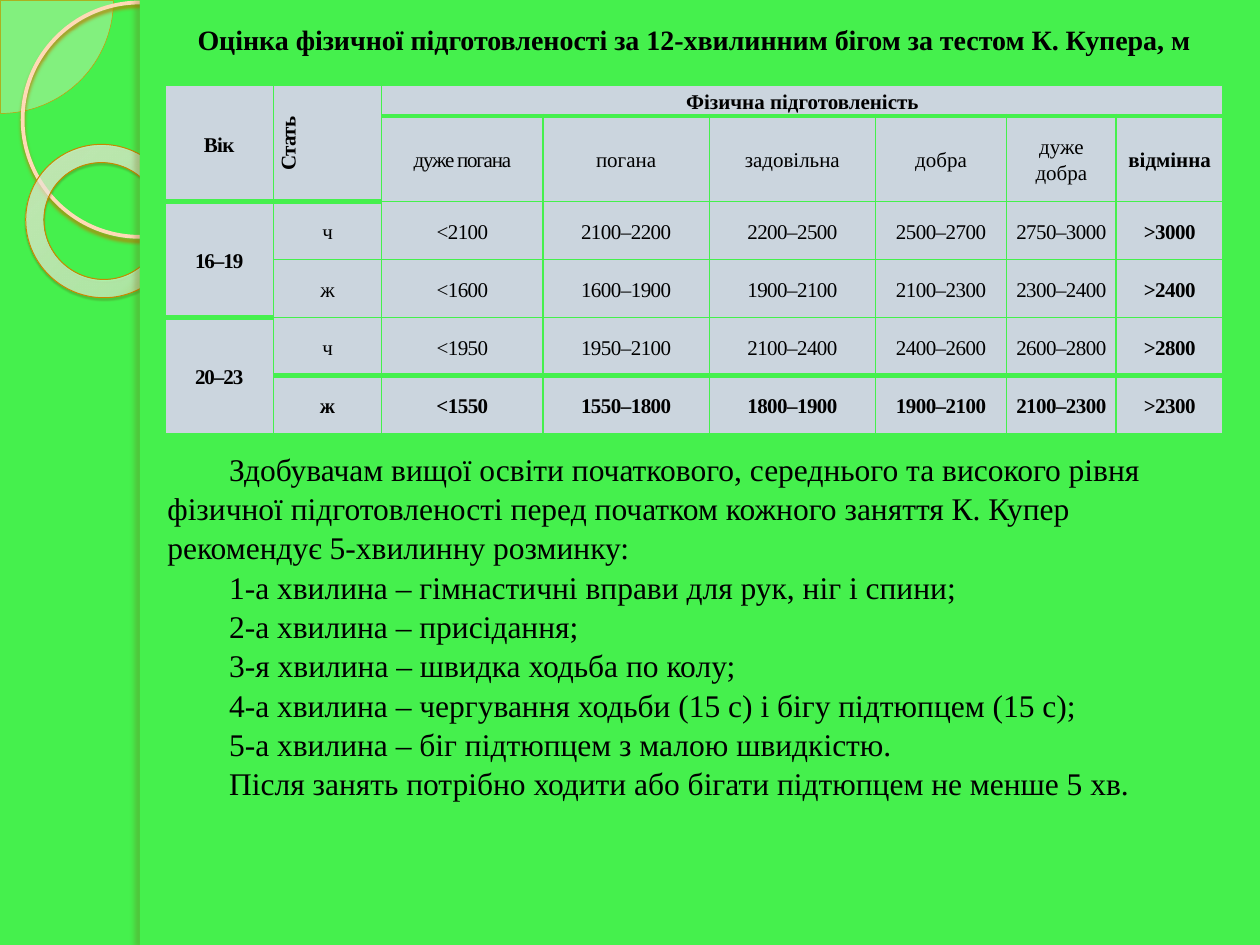
from lxml import etree
from pptx import Presentation
from pptx import util as u
from pptx.dml.color import RGBColor
from pptx.enum import shapes, text
from pptx.oxml import parse_xml
from pptx.oxml.ns import qn

GREEN = RGBColor(0x45, 0xF0, 0x4D)
CELL = RGBColor(0xCB, 0xD5, 0xDE)
BLACK = RGBColor(0x00, 0x00, 0x00)
CREAM = RGBColor(0xFF, 0xF1, 0xE4)
PEACH = RGBColor(0xFF, 0xDA, 0xB6)
GOLD = RGBColor(0xD7, 0x90, 0x00)
OCHRE = RGBColor(0xC9, 0x87, 0x00)
BROWN = RGBColor(0xBA, 0x7D, 0x00)
DARK = RGBColor(0x5C, 0x3E, 0x00)
UMBER = RGBColor(0x72, 0x50, 0x0B)
NS = 'xmlns:a="http://schemas.openxmlformats.org/drawingml/2006/main"'

TITLE = "Оцінка фізичної підготовленості за 12-хвилинним бігом за тестом К. Купера, м"
ROWS = [
    ["Вік", "Стать", "Фізична підготовленість", "", "", "", "", ""],
    ["", "", "дуже погана", "погана", "задовільна", "добра", "дуже добра", "відмінна"],
    ["16–19", "ч", "<2100", "2100–2200", "2200–2500", "2500–2700", "2750–3000", ">3000"],
    ["", "ж", "<1600", "1600–1900", "1900–2100", "2100–2300", "2300–2400", ">2400"],
    ["20–23", "ч", "<1950", "1950–2100", "2100–2400", "2400–2600", "2600–2800", ">2800"],
    ["", "ж", "<1550", "1550–1800", "1800–1900", "1900–2100", "2100–2300", ">2300"],
]
COL_WIDTHS = [0.86, 0.86, 1.28, 1.32, 1.32, 1.04, 0.87, 0.85]
ROW_HEIGHTS = [0.24, 0.68] + [0.46] * 4
MERGES = [((0, 0), (1, 0)), ((0, 1), (1, 1)), ((0, 2), (0, 7)),
          ((2, 0), (3, 0)), ((4, 0), (5, 0))]
# Cells whose top edge is thick
THICK_TOPS = ({(1, c) for c in range(2, 8)} | {(2, 0), (2, 1), (4, 0)}
              | {(5, c) for c in range(1, 8)})
WARM_UP = [
    "Здобувачам вищої освіти початкового, середнього та високого рівня фізичної "
    "підготовленості перед початком кожного заняття К. Купер рекомендує 5-хвилинну розминку:",
    "1-а хвилина – гімнастичні вправи для рук, ніг і спини;",
    "2-а хвилина – присідання;",
    "3-я хвилина – швидка ходьба по колу;",
    "4-а хвилина – чергування ходьби (15 с) і бігу підтюпцем (15 с);",
    "5-а хвилина – біг підтюпцем з малою швидкістю.",
    "Після занять потрібно ходити або бігати підтюпцем не менше 5 хв.",
]


def spacing(row, col):
    """Letter spacing of a table cell, in points."""
    if row == 0:
        return -0.4 if col < 2 else 0
    if row == 1:
        return -0.7 if col == 2 else 0
    return {0: -0.6, 1: -0.4}.get(col, -0.3)


class SlideBuilder:
    font = "Times New Roman"

    def __init__(self, prs):
        self.s = prs.slides.add_slide(prs.slide_layouts[6])
        self.s.background.fill.solid()
        self.s.background.fill.fore_color.rgb = GREEN

    def shape(self, kind, box, fill=None, alpha=None, line=None, adj=(), rotation=0, shadow=None):
        sp = self.s.shapes.add_shape(kind, *map(u.Inches, box))
        sp.shadow.inherit = False
        sp.rotation = rotation
        for i, value in enumerate(adj):
            sp.adjustments[i] = value
        if fill is None:
            sp.fill.background()
        else:
            sp.fill.solid()
            sp.fill.fore_color.rgb = fill
        if alpha:
            clr = sp._element.spPr.find(".//" + qn("a:srgbClr"))
            etree.SubElement(clr, qn("a:alpha")).set("val", str(alpha * 1000))
        if line:
            sp.line.color.rgb, sp.line.width = line[0], u.Pt(line[1])
        else:
            sp.line.fill.background()
        if shadow:
            self.shadow(sp, *shadow)
        return sp

    def shadow(self, sp, color, alpha, blur, dist, angle):
        effects = sp._element.spPr.find(qn("a:effectLst"))
        effects.append(parse_xml(
            f'<a:outerShdw {NS} blurRad="{u.Pt(blur)}" dist="{u.Pt(dist)}" '
            f'dir="{angle * 60000}" algn="tl" rotWithShape="0"><a:srgbClr val="{color}">'
            f'<a:alpha val="{alpha * 1000}"/></a:srgbClr></a:outerShdw>'))

    def radial_gradient(self, sp, stops, rect):
        gs = "".join(f'<a:gs pos="{pos * 1000}"><a:srgbClr val="{color}">'
                     f'<a:alpha val="{alpha * 1000}"/></a:srgbClr></a:gs>'
                     for pos, color, alpha in stops)
        sides = " ".join(f'{k}="{v * 1000}"' for k, v in zip("ltrb", rect))
        spPr = sp._element.spPr
        spPr.replace(spPr.find(qn("a:noFill")), parse_xml(
            f'<a:gradFill {NS} rotWithShape="1"><a:gsLst>{gs}</a:gsLst>'
            f'<a:path path="circle"><a:fillToRect {sides}/></a:path></a:gradFill>'))

    def run(self, p, words, size, bold=False, spc=0):
        r = p.add_run()
        r.text = words
        style = {"name": self.font, "size": u.Pt(size), "bold": bold}
        for key, value in style.items():
            setattr(r.font, key, value)
        r.font.color.rgb = BLACK
        if spc:
            r._r.get_or_add_rPr().set("spc", str(round(spc * 100)))

    def text(self, box, paragraphs, size, bold=False, align=None, indent=0, leading=None):
        tf = self.s.shapes.add_textbox(*map(u.Inches, box)).text_frame
        tf.word_wrap = True
        tf.auto_size = text.MSO_AUTO_SIZE.SHAPE_TO_FIT_TEXT
        for i, words in enumerate(paragraphs):
            p = tf.add_paragraph() if i else tf.paragraphs[0]
            p.alignment, p.line_spacing = align, leading
            if indent:
                pPr = p._p.get_or_add_pPr()
                pPr.set("marL", "0")
                pPr.set("indent", str(u.Inches(indent)))
            self.run(p, words, size, bold)

    def borders(self, cell, widths):
        tcPr = cell._tc.get_or_add_tcPr()
        for i, (side, width) in enumerate(widths.items()):
            tcPr.insert(i, parse_xml(
                f'<a:ln{side} {NS} w="{u.Pt(width)}"><a:solidFill><a:srgbClr val="{GREEN}"/>'
                f'</a:solidFill></a:ln{side}>'))

    def table(self, box):
        tbl = self.s.shapes.add_table(len(ROWS), len(COL_WIDTHS), *map(u.Inches, box)).table
        tbl.first_row = tbl.horz_banding = False
        for column, width in zip(tbl.columns, COL_WIDTHS):
            column.width = u.Inches(width)
        for row, height in zip(tbl.rows, ROW_HEIGHTS):
            row.height = u.Inches(height)
        for first, last in MERGES:
            tbl.cell(*first).merge(tbl.cell(*last))
        for r, row in enumerate(ROWS):
            for c, words in enumerate(row):
                self.cell(tbl.cell(r, c), r, c, words)
        tbl.cell(0, 1)._tc.get_or_add_tcPr().set("vert", "vert270")

    def cell(self, cell, r, c, words):
        style = {"margin_left": u.Inches(0.05), "margin_right": u.Inches(0.05),
                 "margin_top": 0, "margin_bottom": 0,
                 "vertical_anchor": text.MSO_ANCHOR.MIDDLE}
        for key, value in style.items():
            setattr(cell, key, value)
        cell.fill.solid()
        cell.fill.fore_color.rgb = CELL
        below = r + (cell.span_height if cell.is_merge_origin else 1)
        self.borders(cell, {"L": 1, "R": 1, "T": 3 if (r, c) in THICK_TOPS else 1,
                            "B": 3 if (below, c) in THICK_TOPS else 1})
        if words:
            p = cell.text_frame.paragraphs[0]
            p.alignment, p.line_spacing = text.PP_ALIGN.CENTER, 1.15
            self.run(p, words, 12, r in (0, 5) or c in (0, 7), spacing(r, c))


def main():
    prs = Presentation()
    prs.slide_width, prs.slide_height = u.Inches(10), u.Inches(7.5)
    b = SlideBuilder(prs)
    kinds = shapes.MSO_SHAPE

    # Side decoration
    b.shape(kinds.PIE, (-0.89, -0.89, 1.79, 1.79), CREAM, 33, (GOLD, 0.25), adj=(0, 54))
    b.shape(kinds.OVAL, (0.18, 0.02, 1.86, 1.86), line=(PEACH, 2.15),
            shadow=(BROWN, 85, 2, 2, 90))
    ring = b.shape(kinds.DONUT, (0.2, 1.15, 1.23, 1.21), line=(OCHRE, 0.58), adj=(0.12,),
                   rotation=38.6, shadow=(DARK, 35, 1, 1.2, 75))
    b.radial_gradient(ring, [(0, "FFF6EE", 70), (70, "FFFAF6", 55), (100, "DD9500", 60)],
                      (-408, -50, 508, 150))

    # Content panel and its shaded edge
    b.shape(kinds.RECTANGLE, (1.11, 0, 8.89, 7.5), GREEN)
    b.shape(kinds.RECTANGLE, (1.11, 0, 0.08, 7.5), GREEN, shadow=(UMBER, 25, 3, 3, 180))

    # Title, fitness table, warm-up advice
    b.text((1.22, 0.13, 8.58, 0.37), [TITLE], 16, bold=True, align=text.PP_ALIGN.CENTER)
    b.table((1.31, 0.68, 8.4, 2.76))
    b.text((1.23, 3.51, 8.42, 2.83), WARM_UP, 18, indent=0.49, leading=1.04)

    prs.save("out.pptx")


if __name__ == "__main__":
    main()
